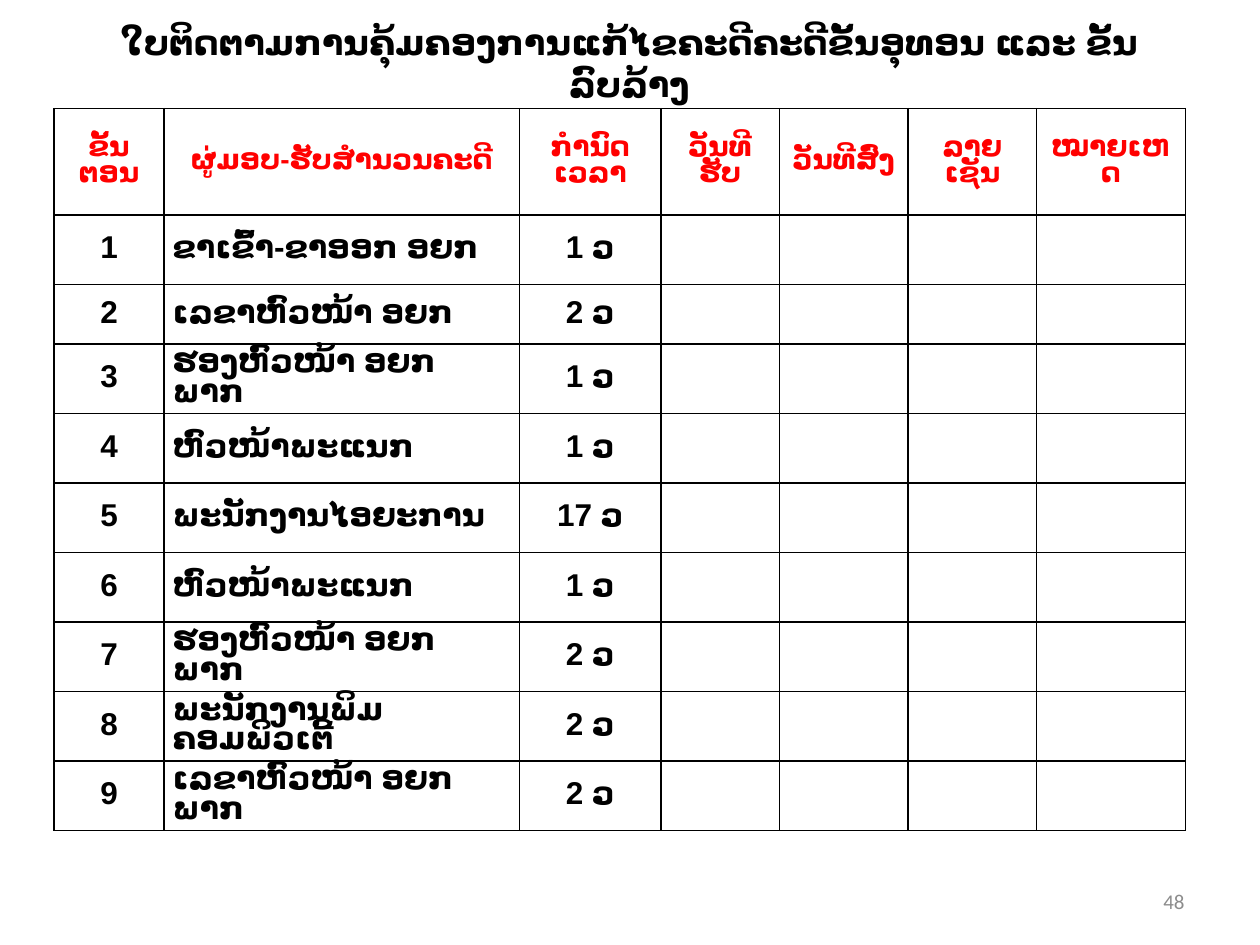
from dataclasses import dataclass

from lxml.etree import SubElement
from pptx import Presentation
from pptx.dml.color import RGBColor as Rgb
from pptx.enum.text import MSO_ANCHOR as Anchor, PP_ALIGN as Align
from pptx.oxml.ns import qn
from pptx.util import Inches, Pt


@dataclass(frozen=True)
class Theme:
    ink: str = "000000"
    heading: str = "FF0000"
    muted: str = "8C8C8C"
    font: str = "Arial"
    number_font: str = "Calibri"
    title_size: int = 20
    heading_size: int = 16
    body_size: int = 18
    number_size: int = 12
    cell_spacing: float = 0.85
    cell_inset: float = 0.07
    border: float = 1
    outline: float = 0.75


THEME = Theme()
SLIDE_WIDTH, SLIDE_HEIGHT = Inches(10), Inches(7.5)
COLUMN_SHARES = [0.87, 2.82, 1.12, 0.94, 1.02, 1.02, 1.18]
ROW_SHARES = [0.84, 0.55, 0.47] + [0.55] * 7
TITLE = "ໃບຕິດຕາມການຄຸ້ມຄອງການແກ້ໄຂຄະດີຄະດີຂັ້ນອຸທອນ ແລະ ຂັ້ນລົບລ້າງ"
HEADINGS = ["ຂັ້ນ\nຕອນ", "ຜູ່ມອບ-ຮັບສໍານວນຄະດີ", "ກໍານົດເວລາ", "ວັນທີຮັບ",
            "ວັນທີສົ່ງ", "ລາຍເຊັນ", "ໝາຍເຫດ"]
STEPS = [
    ("ຂາເຂົ້າ-ຂາອອກ ອຍກ", 1),
    ("ເລຂາຫົວໜ້າ ອຍກ", 2),
    ("ຮອງຫົວໜ້າ ອຍກ ພາກ", 1),
    ("ຫົວໜ້າພະແນກ", 1),
    ("ພະນັກງານໄອຍະການ", 17),
    ("ຫົວໜ້າພະແນກ", 1),
    ("ຮອງຫົວໜ້າ ອຍກ ພາກ", 2),
    ("ພະນັກງານພິມຄອມພິວເຕີ້", 2),
    ("ເລຂາຫົວໜ້າ ອຍກ ພາກ", 2),
]


def share_box(left, top, width, height):
    return (int(SLIDE_WIDTH * left), int(SLIDE_HEIGHT * top),
            int(SLIDE_WIDTH * width), int(SLIDE_HEIGHT * height))


def divide(length, shares):
    return [int(length * share / sum(shares)) for share in shares]


def add_solid_line(parent, tag, color, width):
    line = SubElement(parent, qn(tag), w=str(Pt(width)))
    SubElement(SubElement(line, qn("a:solidFill")), qn("a:srgbClr"), val=color)
    return line


def style_text(frame, size, color, align, font=THEME.font, bold=True, spacing=None):
    for paragraph in frame.paragraphs:
        paragraph.alignment = align
        paragraph.line_spacing = spacing
        for run in paragraph.runs:
            run.font.size = Pt(size)
            run.font.bold = bold
            run.font.name = font
            run.font.color.rgb = Rgb.from_string(color)
            SubElement(run.font._element, qn("a:cs"), typeface=font)


def outline_text(frame, color):
    for paragraph in frame.paragraphs:
        for run in paragraph.runs:
            properties = run.font._element
            line = add_solid_line(properties, "a:ln", color, THEME.outline)
            properties.insert(0, line)


def add_label(slide, box, text, *style, **options):
    frame = slide.shapes.add_textbox(*box).text_frame
    frame.word_wrap = True
    frame.vertical_anchor = Anchor.MIDDLE
    frame.text = text
    style_text(frame, *style, **options)


def fill_cell(cell, text, size, color, align):
    cell.fill.background()
    cell.vertical_anchor = Anchor.MIDDLE
    cell.margin_left = cell.margin_right = Inches(THEME.cell_inset)
    cell.margin_top = cell.margin_bottom = 0
    cell.text_frame.text = text
    style_text(cell.text_frame, size, color, align, spacing=THEME.cell_spacing)
    properties = cell._tc.get_or_add_tcPr()
    for index, side in enumerate(("a:lnL", "a:lnR", "a:lnT", "a:lnB")):
        line = add_solid_line(properties, side, THEME.ink, THEME.border)
        properties.insert(index, line)


def add_tracking_table(slide, box):
    table = slide.shapes.add_table(len(STEPS) + 1, len(HEADINGS), *box).table
    table.first_row = table.horz_banding = False
    for column, width in zip(table.columns, divide(box[2], COLUMN_SHARES)):
        column.width = width
    for row, height in zip(table.rows, divide(box[3], ROW_SHARES)):
        row.height = height
    for column, heading in enumerate(HEADINGS):
        cell = table.cell(0, column)
        fill_cell(cell, heading, THEME.heading_size, THEME.heading, Align.CENTER)
        outline_text(cell.text_frame, THEME.heading)
    for number, (handler, days) in enumerate(STEPS, start=1):
        entries = [str(number), handler, f"{days} ວ"]
        entries += [""] * (len(HEADINGS) - len(entries))
        for column, entry in enumerate(entries):
            align = Align.LEFT if column == 1 else Align.CENTER
            fill_cell(table.cell(number, column), entry,
                      THEME.body_size, THEME.ink, align)


def main():
    deck = Presentation()
    deck.slide_width, deck.slide_height = SLIDE_WIDTH, SLIDE_HEIGHT
    slide = deck.slides.add_slide(deck.slide_layouts[6])
    add_tracking_table(slide, share_box(0.043, 0.115, 0.898, 0.764))
    add_label(slide, share_box(0.043, 0.02, 0.913, 0.092), TITLE,
              THEME.title_size, THEME.ink, Align.CENTER)
    add_label(slide, share_box(0.717, 0.927, 0.233, 0.053), "48",
              THEME.number_size, THEME.muted, Align.RIGHT,
              font=THEME.number_font, bold=False)
    deck.save("out.pptx")


if __name__ == "__main__":
    main()
